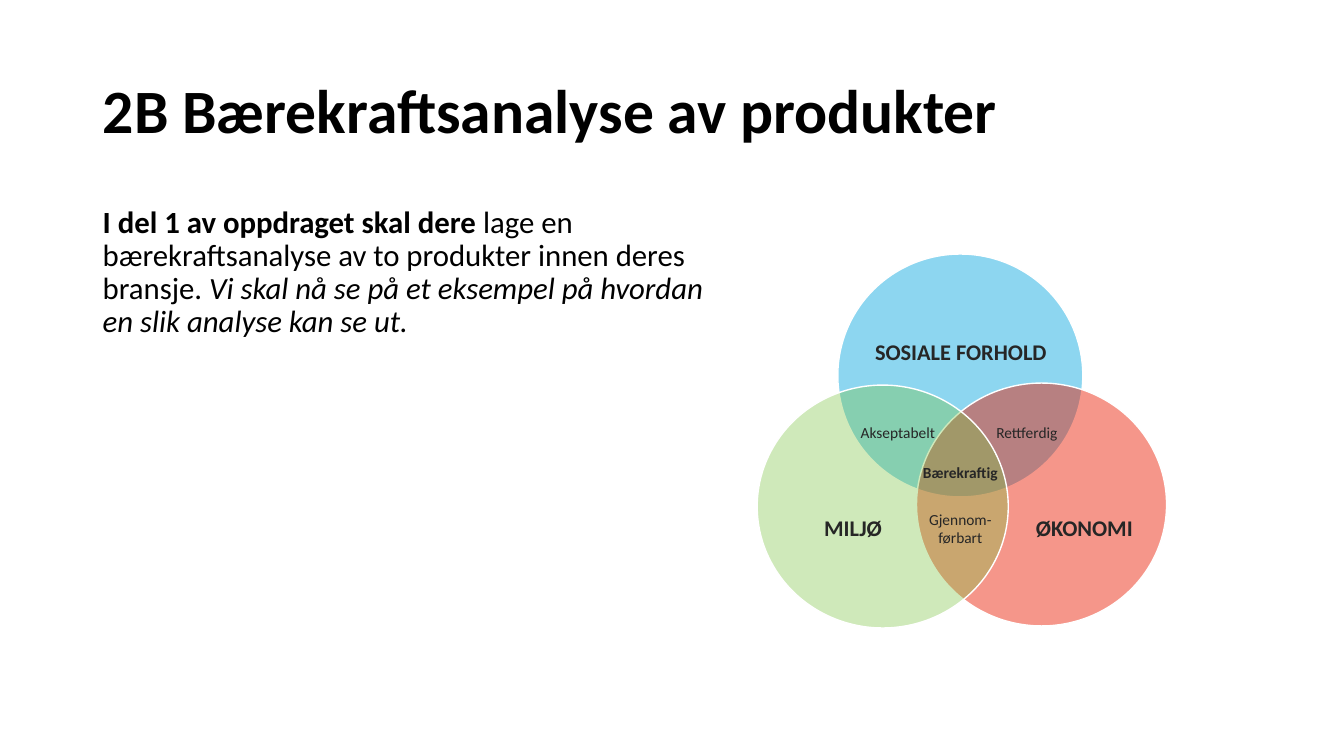
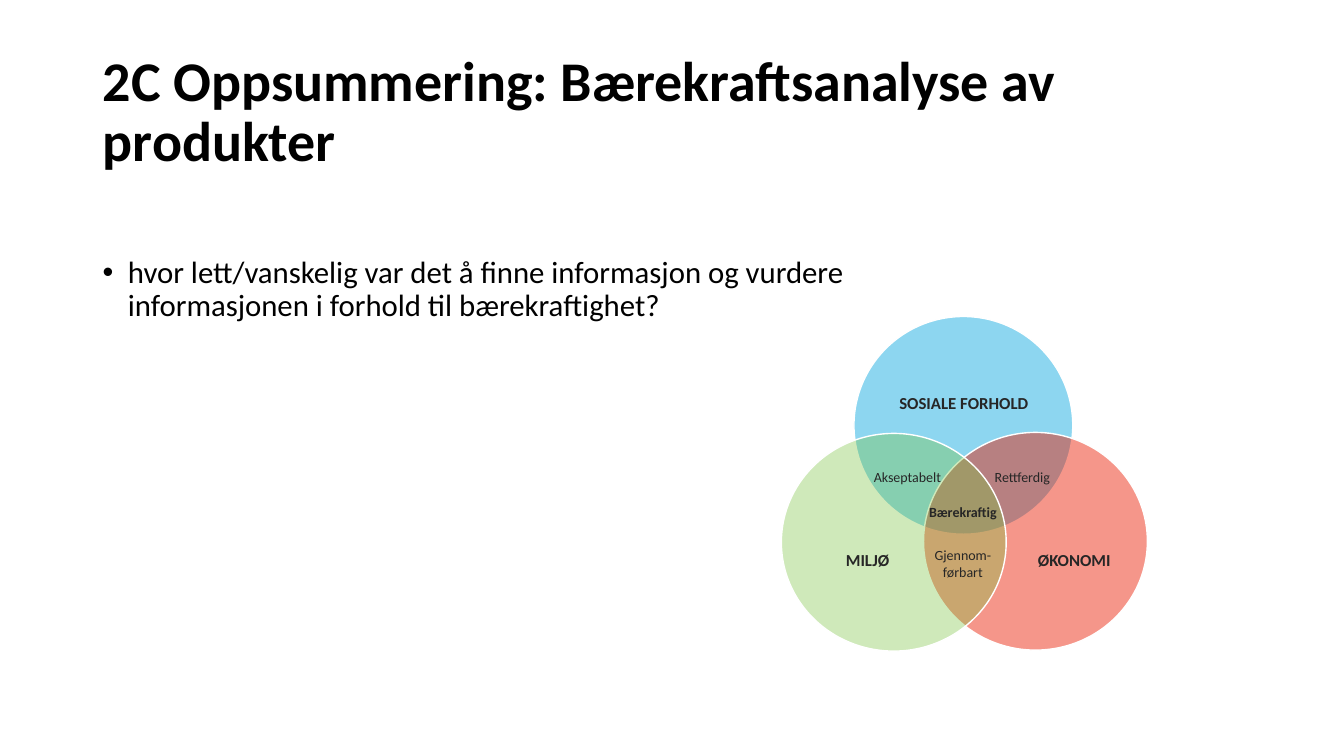
from dataclasses import dataclass

from lxml import etree
from pptx import Presentation
from pptx.dml.color import RGBColor
from pptx.enum.shapes import MSO_SHAPE
from pptx.enum.text import MSO_ANCHOR, MSO_AUTO_SIZE, PP_ALIGN
from pptx.oxml.ns import qn
from pptx.util import Pt

# Shared style: 100 px to the inch
EMU_PER_PX = 9144
PAGE_WIDTH, PAGE_HEIGHT = 1333, 750
TITLE_ONLY = 5
FONT = "Calibri"
BODY_SIZE = 22
LINE_SPACING = 0.9
MARGIN = 92
BULLET_INDENT = 25

BLACK = RGBColor(0x00, 0x00, 0x00)
WHITE = RGBColor(0xFF, 0xFF, 0xFF)
CHARCOAL = RGBColor(0x26, 0x26, 0x26)
BLUE = RGBColor(0x1D, 0xAF, 0xE3)
RED = RGBColor(0xEA, 0x1C, 0x00)
GREEN = RGBColor(0x7C, 0xC3, 0x41)

OVAL = MSO_SHAPE.OVAL
LEFT, CENTER = PP_ALIGN.LEFT, PP_ALIGN.CENTER
TOP, MIDDLE = MSO_ANCHOR.TOP, MSO_ANCHOR.MIDDLE
NO_AUTOFIT = MSO_AUTO_SIZE.NONE


@dataclass(frozen=True)
class Box:
    left: int
    top: int
    width: int
    height: int


@dataclass(frozen=True)
class Span:
    text: str
    bold: bool = False
    italic: bool = False


@dataclass(frozen=True)
class Circle:
    box: Box
    color: RGBColor
    opacity: int


@dataclass(frozen=True)
class Label:
    text: str
    box: Box
    is_main: bool = False
    bold: bool = False


@dataclass(frozen=True)
class Venn:
    left: int
    top: int
    scale: float
    main_size: int
    overlap_size: int


@dataclass(frozen=True)
class Page:
    title: str
    title_size: int
    title_width: int
    body: tuple[Span, ...]
    body_box: Box
    bulleted: bool
    venn: Venn


# Venn diagram, measured from its top left corner at full scale
CIRCLES = (
    Circle(Box(80, 0, 243, 241), BLUE, 50),
    Circle(Box(158, 128, 248, 241), RED, 46),
    Circle(Box(0, 130, 249, 241), GREEN, 36),
)
LABELS = (
    Label("Akseptabelt", Box(89, 163, 101, 29)),
    Label("SOSIALE FORHOLD", Box(79, 79, 246, 37), is_main=True, bold=True),
    Label("MILJØ", Box(14, 253, 162, 37), is_main=True, bold=True),
    Label("ØKONOMI", Box(256, 253, 137, 37), is_main=True, bold=True),
    Label("Rettferdig", Box(217, 163, 101, 29)),
    Label("Gjennom-\nførbart", Box(151, 249, 101, 47)),
    Label("Bærekraftig", Box(151, 202, 101, 29), bold=True),
)

PAGES = (
    Page(
        title="2B Bærekraftsanalyse av produkter",
        title_size=44,
        title_width=1150,
        body=(
            Span("I del 1 av oppdraget skal dere ", bold=True),
            Span("lage en bærekraftsanalyse av to produkter innen deres bransje. "),
            Span("Vi skal nå se på et eksempel på hvordan en slik analyse kan se ut.",
                 italic=True),
        ),
        body_box=Box(MARGIN, 200, 635, 476),
        bulleted=False,
        venn=Venn(751, 252, 1, 16, 11),
    ),
    Page(
        title="2C Oppsummering: Bærekraftsanalyse av produkter",
        title_size=40,
        title_width=1199,
        body=(
            Span("hvor lett/vanskelig var det å finne informasjon og vurdere "
                 "informasjonen i forhold til bærekraftighet?"),
        ),
        body_box=Box(MARGIN, 250, 763, 426),
        bulleted=True,
        venn=Venn(775, 314, 0.895, 12, 10),
    ),
)


def px(length: float) -> int:
    return round(length * EMU_PER_PX)


def emu_box(box: Box) -> tuple[int, int, int, int]:
    return px(box.left), px(box.top), px(box.width), px(box.height)


def place_in_venn(box: Box, venn: Venn) -> Box:
    return Box(
        round(venn.left + box.left * venn.scale),
        round(venn.top + box.top * venn.scale),
        round(box.width * venn.scale),
        round(box.height * venn.scale),
    )


def style_span(span, size: int, color: RGBColor, bold=False, italic=False) -> None:
    span.font.name = FONT
    span.font.size = Pt(size)
    span.font.color.rgb = color
    span.font.bold = bold
    span.font.italic = italic


def prepare_frame(frame, anchor) -> None:
    frame.word_wrap = True
    frame.auto_size = NO_AUTOFIT
    frame.vertical_anchor = anchor


def add_bullet(para) -> None:
    properties = para._p.get_or_add_pPr()
    properties.set("marL", str(px(BULLET_INDENT)))
    properties.set("indent", str(-px(BULLET_INDENT)))
    etree.SubElement(properties, qn("a:buFont")).set("typeface", "Arial")
    etree.SubElement(properties, qn("a:buChar")).set("char", "•")


def set_title(slide, page: Page) -> None:
    title = slide.shapes.title
    box = Box(MARGIN, 40, page.title_width, 145)
    title.left, title.top, title.width, title.height = emu_box(box)
    frame = title.text_frame
    frame.text = page.title
    prepare_frame(frame, MIDDLE)
    para = frame.paragraphs[0]
    para.alignment = LEFT
    para.line_spacing = LINE_SPACING
    style_span(para.runs[0], page.title_size, BLACK, bold=True)


def add_body(slide, page: Page) -> None:
    frame = slide.shapes.add_textbox(*emu_box(page.body_box)).text_frame
    prepare_frame(frame, TOP)
    para = frame.paragraphs[0]
    para.line_spacing = LINE_SPACING
    if page.bulleted:
        add_bullet(para)
    for part in page.body:
        span = para.add_run()
        span.text = part.text
        style_span(span, BODY_SIZE, BLACK, part.bold, part.italic)


def add_circle(shapes, circle: Circle, venn: Venn) -> None:
    oval = shapes.add_shape(OVAL, *emu_box(place_in_venn(circle.box, venn)))
    oval.shadow.inherit = False
    oval.fill.solid()
    oval.fill.fore_color.rgb = circle.color
    color = oval._element.spPr.find(qn("a:solidFill")).find(qn("a:srgbClr"))
    etree.SubElement(color, qn("a:alpha")).set("val", str(circle.opacity * 1000))
    oval.line.color.rgb = WHITE
    oval.line.width = Pt(1)


def add_label(shapes, label: Label, venn: Venn) -> None:
    frame = shapes.add_textbox(*emu_box(place_in_venn(label.box, venn))).text_frame
    prepare_frame(frame, TOP)
    frame.text = label.text
    size = venn.main_size if label.is_main else venn.overlap_size
    for para in frame.paragraphs:
        para.alignment = CENTER
        style_span(para.runs[0], size, CHARCOAL, label.bold)


def add_venn(slide, venn: Venn) -> None:
    shapes = slide.shapes.add_group_shape().shapes
    for circle in CIRCLES:
        add_circle(shapes, circle, venn)
    for label in LABELS:
        add_label(shapes, label, venn)


def main() -> None:
    deck = Presentation()
    deck.slide_width, deck.slide_height = px(PAGE_WIDTH), px(PAGE_HEIGHT)
    for page in PAGES:
        slide = deck.slides.add_slide(deck.slide_layouts[TITLE_ONLY])
        set_title(slide, page)
        add_body(slide, page)
        add_venn(slide, page.venn)
    deck.save("out.pptx")


if __name__ == "__main__":
    main()
